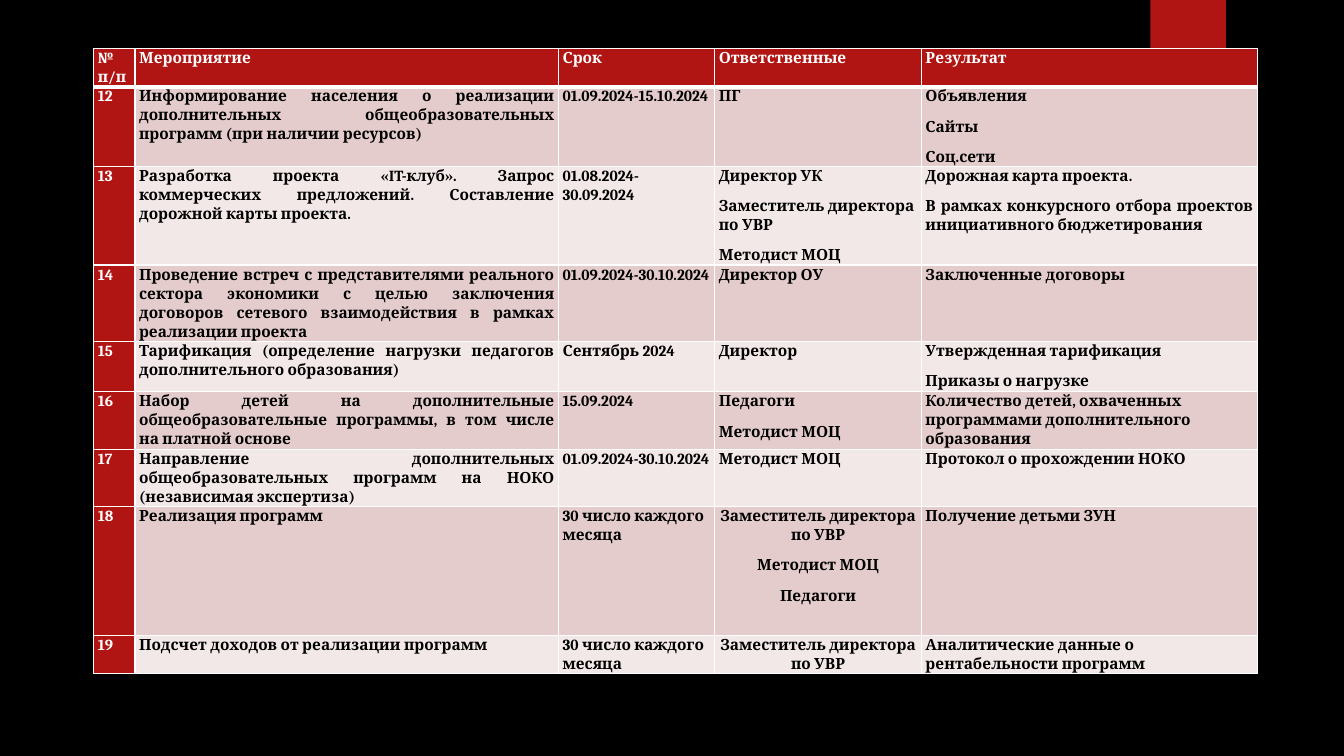
from lxml import etree
from pptx import Presentation
from pptx import util as u
from pptx.dml.color import RGBColor
from pptx.enum import shapes, text
from pptx.oxml import ns

RED, WHITE, BLACK = "B01513", "FFFFFF", "000000"
BANDS = ["F2E8E7", "E4CCCC"]
WIDTHS = [0.41, 4.2, 1.55, 2.05, 3.33]
HEIGHTS = [0.38, 0.79, 0.98, 0.75, 0.5, 0.57, 0.57, 1.28, 0.38]
FIRST = 12
HEAD = ["№ п/п", "Мероприятие", "Срок", "Ответственные", "Результат"]
# Each line of a cell is a paragraph.
TASKS = [
    ["Информирование населения о реализации дополнительных общеобразовательных "
     "программ (при наличии ресурсов) ",
     "01.09.2024-15.10.2024", "ПГ", "Объявления\nСайты\nСоц.сети"],
    ["Разработка проекта «IT-клуб». Запрос коммерческих предложений. "
     "Составление дорожной карты проекта.",
     "01.08.2024-30.09.2024",
     "Директор УК\nЗаместитель директора по УВР\nМетодист МОЦ",
     "Дорожная карта проекта.\nВ рамках конкурсного отбора проектов "
     "инициативного бюджетирования"],
    ["Проведение встреч с представителями реального сектора экономики с целью "
     "заключения договоров сетевого взаимодействия в рамках реализации проекта",
     "01.09.2024-30.10.2024", "Директор ОУ", "Заключенные договоры"],
    ["Тарификация (определение нагрузки педагогов дополнительного образования)",
     "Сентябрь 2024", "Директор",
     "Утвержденная тарификация\nПриказы о нагрузке"],
    ["Набор детей на дополнительные общеобразовательные программы, "
     "в том числе на платной основе",
     "15.09.2024", "Педагоги\nМетодист МОЦ",
     "Количество детей, охваченных программами дополнительного образования"],
    ["Направление дополнительных общеобразовательных программ на НОКО "
     "(независимая экспертиза)",
     "01.09.2024-30.10.2024", "Методист МОЦ", "Протокол о прохождении НОКО"],
    ["Реализация программ", "30 число каждого месяца",
     "Заместитель директора по УВР\nМетодист МОЦ\nПедагоги",
     "Получение детьми ЗУН"],
    ["Подсчет доходов от реализации программ", "30 число каждого месяца",
     "Заместитель директора по УВР",
     "Аналитические данные о рентабельности программ"],
]
ALIGN = text.PP_ALIGN
# Cells that are not justified, by row and column.
LEFT = {(2, 3), (5, 4), (6, 4), (7, 1), (7, 2), (7, 4), (8, 1), (8, 2), (8, 4)}
CENTER = {(7, 3), (8, 3)}


def rgb(code):
    return RGBColor.from_string(code)


def paint(item, code):
    item.fill.solid()
    item.fill.fore_color.rgb = rgb(code)


def style(item, form):
    for name, value in form.items():
        setattr(item, name, value)


def edge(cell, side, width):
    """Draw a white border on side L, R, T or B, in that order."""
    props = cell._tc.get_or_add_tcPr()
    line = etree.SubElement(props, ns.qn("a:ln" + side), w=str(u.Pt(width)))
    fill = etree.SubElement(line, ns.qn("a:solidFill"))
    etree.SubElement(fill, ns.qn("a:srgbClr"), val=WHITE)


def write(cell, words, align, color):
    cell.text = words
    for par in cell.text_frame.paragraphs:
        style(par, {"alignment": align, "line_spacing": 1.07,
                    "space_before": u.Pt(0), "space_after": u.Pt(8)})
        style(par.font, {"name": "Cambria", "size": u.Pt(11), "bold": True})
        par.font.color.rgb = rgb(color)


def fill_cell(cell, row, col, words):
    style(cell, {"margin_left": u.Inches(0.04), "margin_right": u.Inches(0.04),
                 "margin_top": 0, "margin_bottom": 0})
    dark = row == 0 or col == 0
    align = (LEFT and (row, col) in LEFT and ALIGN.LEFT
             or (row, col) in CENTER and ALIGN.CENTER or ALIGN.JUSTIFY)
    write(cell, words, align, WHITE if dark else BLACK)
    for side in "LRTB":
        thick = (row, side) in [(0, "B"), (1, "T")]
        edge(cell, side, 3 if thick else 1)
    paint(cell, RED if dark else BANDS[row % 2])


def add_plan(slide):
    rows = [HEAD] + [[str(num)] + task for num, task in enumerate(TASKS, FIRST)]
    table = slide.shapes.add_table(
        len(rows), len(HEAD), u.Inches(0.93), u.Inches(0.48),
        u.Inches(sum(WIDTHS)), u.Inches(sum(HEIGHTS))).table
    for col, width in zip(table.columns, WIDTHS):
        col.width = u.Inches(width)
    for row, height in zip(table.rows, HEIGHTS):
        row.height = u.Inches(height)
    for r, row in enumerate(rows):
        for c, words in enumerate(row):
            fill_cell(table.cell(r, c), r, c, words)


def add_tab(slide):
    tab = slide.shapes.add_shape(
        shapes.MSO_SHAPE.RECTANGLE, u.Inches(11.41), 0,
        u.Inches(0.75), u.Inches(1.25))
    paint(tab, RED)
    tab.line.fill.background()
    tab.shadow.inherit = False


def main():
    deck = Presentation()
    style(deck, {"slide_width": u.Inches(13.33), "slide_height": u.Inches(7.5)})
    slide = deck.slides.add_slide(deck.slide_layouts[6])
    paint(slide.background, BLACK)
    add_tab(slide)
    add_plan(slide)
    deck.save("out.pptx")


if __name__ == "__main__":
    main()
